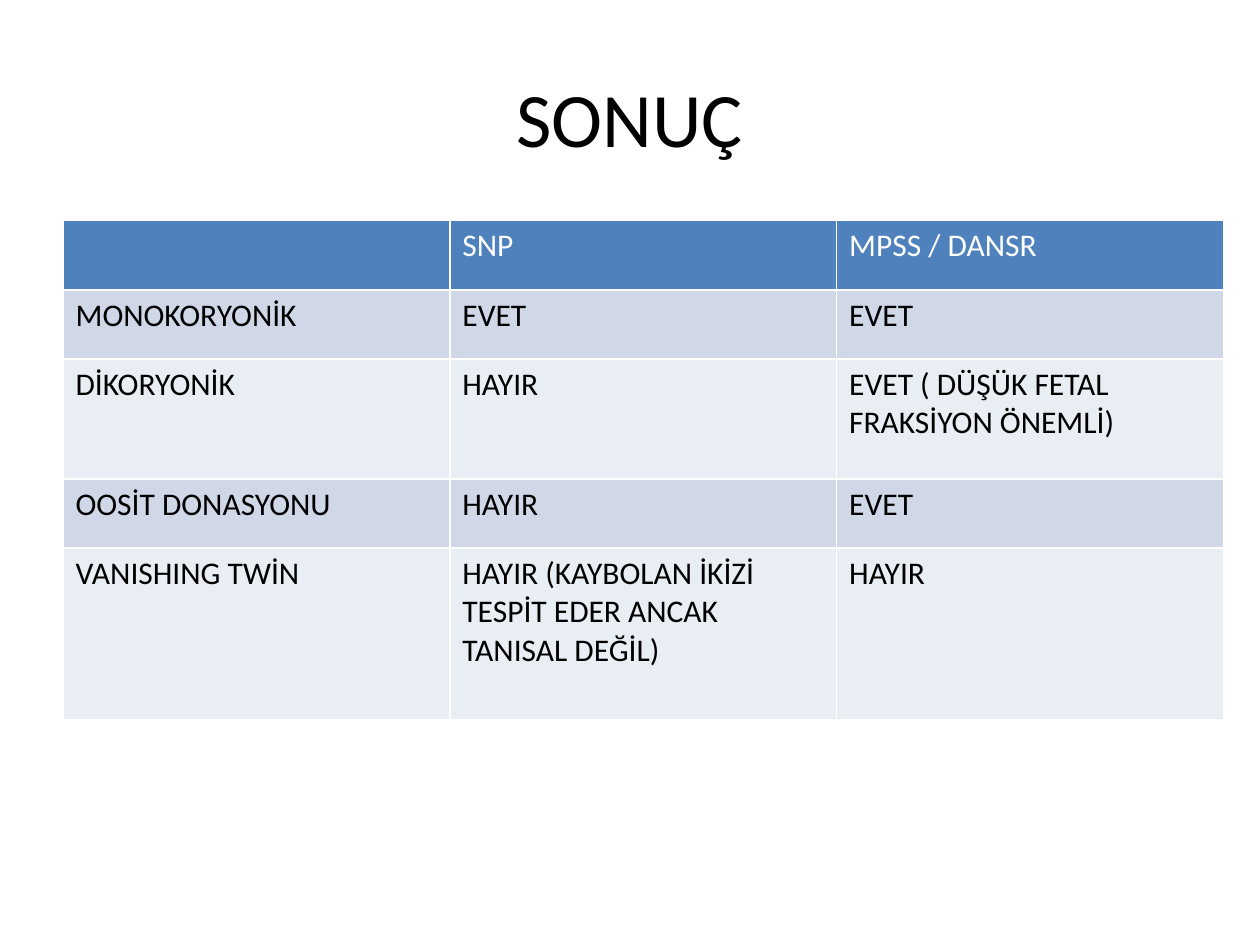
from dataclasses import dataclass

from pptx import Presentation
from pptx.dml.color import RGBColor
from pptx.enum.text import MSO_ANCHOR, PP_ALIGN
from pptx.slide import Slide
from pptx.table import _Cell
from pptx.text.text import TextFrame
from pptx.util import Inches, Pt

MIDDLE = MSO_ANCHOR.MIDDLE
CENTER = PP_ALIGN.CENTER
FONT = "Calibri"
COLORS = {
    "text": "000000",
    "header_text": "FFFFFF",
    "header": "4F81BD",
    "band_dark": "D0D8E8",
    "band_light": "E9EDF4",
}
COLUMN_WIDTH = 3.07


@dataclass
class ResultRow:
    height: float
    texts: tuple[str, str, str]


ROWS = [
    ResultRow(0.55, ("", "SNP", "MPSS / DANSR")),
    ResultRow(0.55, ("MONOKORYONİK", "EVET", "EVET")),
    ResultRow(0.95, ("DİKORYONİK", "HAYIR", "EVET ( DÜŞÜK FETAL FRAKSİYON ÖNEMLİ)")),
    ResultRow(0.55, ("OOSİT DONASYONU", "HAYIR", "EVET")),
    ResultRow(1.36, ("VANISHING TWİN", "HAYIR (KAYBOLAN İKİZİ TESPİT EDER ANCAK TANISAL DEĞİL)", "HAYIR")),
]


def write_text(frame: TextFrame, text: str, size: int, color: str) -> None:
    frame.text = text
    for span in frame.paragraphs[0].runs:
        span.font.name = FONT
        span.font.size = Pt(size)
        span.font.bold = False
        span.font.color.rgb = RGBColor.from_string(COLORS[color])


def add_title(page: Slide, text: str) -> None:
    box = page.shapes.add_textbox(Inches(0.5), Inches(0.3), Inches(9), Inches(1.25))
    frame = box.text_frame
    frame.word_wrap = True
    frame.vertical_anchor = MIDDLE
    write_text(frame, text, 44, "text")
    frame.paragraphs[0].alignment = CENTER


def fill_cell(cell: _Cell, text: str, fill: str, color: str) -> None:
    cell.fill.solid()
    cell.fill.fore_color.rgb = RGBColor.from_string(COLORS[fill])
    write_text(cell.text_frame, text, 18, color)


def add_results(page: Slide, rows: list[ResultRow]) -> None:
    column_count = len(rows[0].texts)
    table = page.shapes.add_table(
        len(rows), column_count, Inches(0.5), Inches(1.75),
        Inches(COLUMN_WIDTH * column_count), Inches(sum(row.height for row in rows)),
    ).table
    for column in table.columns:
        column.width = Inches(COLUMN_WIDTH)
    for index, row in enumerate(rows):
        table.rows[index].height = Inches(row.height)
        band = "band_dark" if index % 2 else "band_light"
        fill, color = (band, "text") if index else ("header", "header_text")
        for cell, text in zip(table.rows[index].cells, row.texts):
            fill_cell(cell, text, fill, color)


def main() -> None:
    """Build the results slide with its title and comparison table."""
    deck = Presentation()
    deck.slide_width, deck.slide_height = Inches(10), Inches(7.5)
    page = deck.slides.add_slide(deck.slide_layouts[6])
    add_title(page, "SONUÇ")
    add_results(page, ROWS)
    deck.save("out.pptx")


if __name__ == "__main__":
    main()
